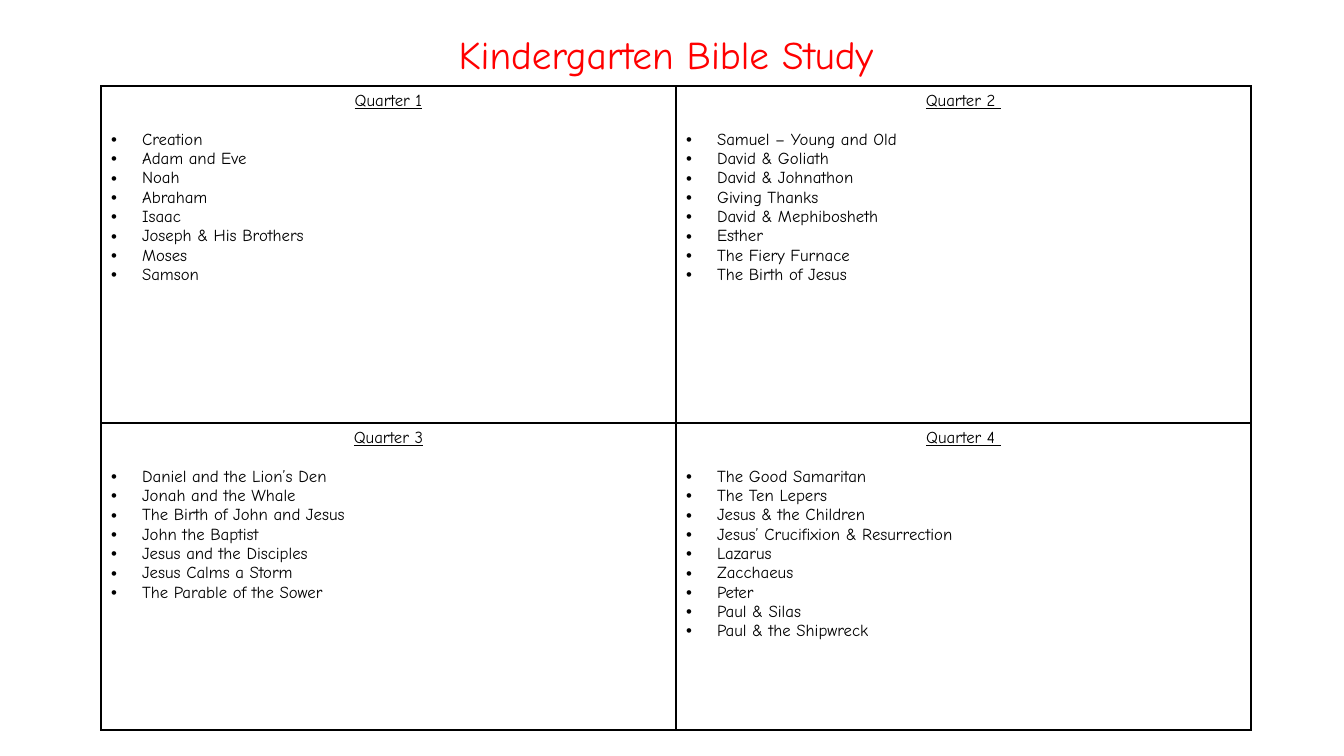
"""Builds the Kindergarten Bible Study slide, a table of four quarters."""
from dataclasses import dataclass

from lxml.etree import SubElement
from pptx import Presentation
from pptx.dml.color import RGBColor as RGB
from pptx.enum.text import MSO_ANCHOR as Anchor, MSO_AUTO_SIZE as AutoSize, PP_ALIGN as Align
from pptx.oxml.ns import qn
from pptx.util import Emu, Pt

QUARTERS = [
    [
        ("Quarter 1", ["Creation", "Adam and Eve", "Noah", "Abraham", "Isaac",
                       "Joseph & His Brothers", "Moses", "Samson"]),
        ("Quarter 2 ", ["Samuel – Young and Old", "David & Goliath", "David & Johnathon",
                        "Giving Thanks", "David & Mephibosheth", "Esther",
                        "The Fiery Furnace", "The Birth of Jesus"]),
    ],
    [
        ("Quarter 3", ["Daniel and the Lion’s Den", "Jonah and the Whale",
                       "The Birth of John and Jesus", "John the Baptist",
                       "Jesus and the Disciples", "Jesus Calms a Storm",
                       "The Parable of the Sower"]),
        ("Quarter 4 ", ["The Good Samaritan", "The Ten Lepers", "Jesus & the Children",
                        "Jesus’ Crucifixion & Resurrection", "Lazarus", "Zacchaeus",
                        "Peter", "Paul & Silas", "Paul & the Shipwreck"]),
    ],
]


@dataclass(frozen=True)
class Theme:
    font: str = "Comic Neue"
    accent: str = "FF0000"
    ink: str = "000000"
    title_size: int = 28
    body_size: int = 12
    heading_gap: int = 14
    border: int = 1


def px(n):
    return Emu(round(n * 914400 / 100.8))


class Deck:
    def __init__(self, theme):
        self.theme = theme
        self.prs = Presentation()
        self.prs.slide_width, self.prs.slide_height = px(1344), px(756)
        self.s = self.prs.slides.add_slide(self.prs.slide_layouts[5])

    def style(self, p, size, color, underline=False):
        for r in p.runs:
            r.font.name = self.theme.font
            r.font.size = Pt(size)
            r.font.color.rgb = RGB.from_string(color)
            r.font.underline = underline

    def title(self, text, x, y, w, h):
        sp = self.s.shapes.title
        sp.left, sp.top, sp.width, sp.height = px(x), px(y), px(w), px(h)
        tf = sp.text_frame
        tf.text = text
        tf.word_wrap = True
        tf.auto_size = AutoSize.NONE
        tf.vertical_anchor = Anchor.MIDDLE
        p = tf.paragraphs[0]
        p.alignment = Align.CENTER
        p.line_spacing = 0.9
        self.style(p, self.theme.title_size, self.theme.accent)

    def bullet(self, p, indent):
        pPr = p._p.get_or_add_pPr()
        pPr.set("marL", str(px(indent)))
        pPr.set("indent", str(-px(indent)))
        SubElement(pPr, qn("a:buFont"), typeface="Arial")
        SubElement(pPr, qn("a:buChar"), char="•")

    def borders(self, cell):
        tcPr = cell._tc.get_or_add_tcPr()
        for side in ("lnL", "lnR", "lnT", "lnB"):
            ln = SubElement(tcPr, qn(f"a:{side}"), w=str(Pt(self.theme.border)))
            fill = SubElement(ln, qn("a:solidFill"))
            SubElement(fill, qn("a:srgbClr"), val=self.theme.ink)

    def quarter(self, cell, heading, lessons):
        self.borders(cell)
        cell.fill.background()
        tf = cell.text_frame
        tf.text = "\n".join([heading, *lessons])
        head, *items = tf.paragraphs
        head.alignment = Align.CENTER
        head.space_after = Pt(self.theme.heading_gap)
        self.style(head, self.theme.body_size, self.theme.ink, underline=True)
        for p in items:
            self.bullet(p, 31)
            self.style(p, self.theme.body_size, self.theme.ink)

    def table(self, rows, x, y, col_width, row_heights):
        cols = len(rows[0])
        frame = self.s.shapes.add_table(len(rows), cols, px(x), px(y),
                                        px(col_width * cols), px(sum(row_heights)))
        tbl = frame.table
        tbl.first_row = tbl.horz_banding = False
        for col in tbl.columns:
            col.width = px(col_width)
        for i, (row, height) in enumerate(zip(rows, row_heights)):
            tbl.rows[i].height = px(height)
            for j, (heading, lessons) in enumerate(row):
                self.quarter(tbl.cell(i, j), heading, lessons)


def main():
    deck = Deck(Theme())
    deck.title("Kindergarten Bible Study ", 93, 40, 1159, 34)
    deck.table(QUARTERS, 101, 86, 575, [337, 307])
    deck.prs.save("out.pptx")


if __name__ == "__main__":
    main()
